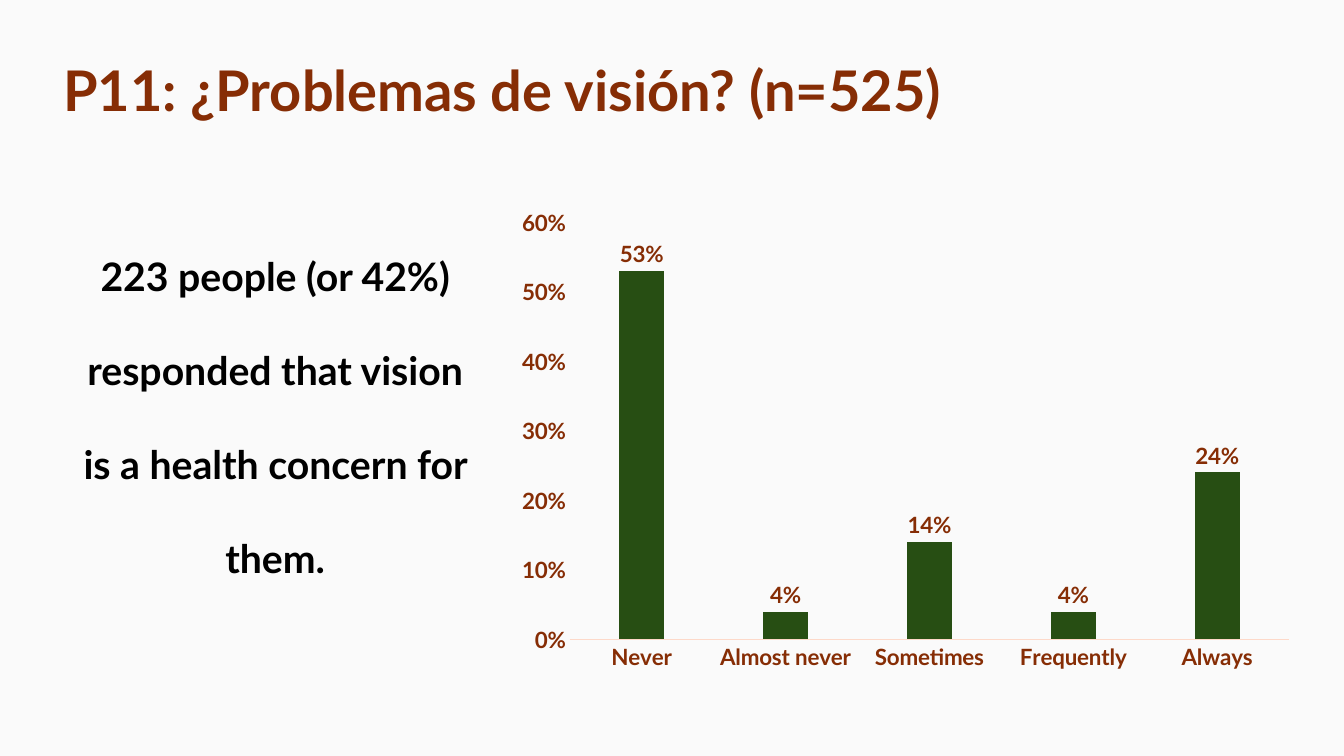
import pptx
import pptx.chart.data
import pptx.dml.color
import pptx.enum.chart
import pptx.enum.text
import pptx.util

RUST = pptx.dml.color.RGBColor(0x86, 0x2D, 0x05)
GREEN = pptx.dml.color.RGBColor(0x27, 0x4E, 0x13)
PEACH = pptx.dml.color.RGBColor(0xFD, 0xD9, 0xC9)
BLACK = pptx.dml.color.RGBColor(0, 0, 0)
PAPER = pptx.dml.color.RGBColor(0xFA, 0xFA, 0xFA)
FONT = "Lato"
EMU_PER_PX = 9525  # 96 px to the inch

ANSWERS = {
    "Never": 0.53,
    "Almost never": 0.04,
    "Sometimes": 0.14,
    "Frequently": 0.04,
    "Always": 0.24,
}


def px(length):
    return pptx.util.Emu(length * EMU_PER_PX)


def set_font(font, size, color):
    font.name = FONT
    font.size = pptx.util.Pt(size)
    font.bold = True
    font.color.rgb = color


def add_text(slide, box, text, *, size, color, align, anchor, spacing, side_inset):
    frame = slide.shapes.add_textbox(*map(px, box)).text_frame
    frame.word_wrap = True
    frame.vertical_anchor = anchor
    frame.margin_left = frame.margin_right = px(side_inset)
    frame.margin_top = frame.margin_bottom = px(5)
    paragraph = frame.paragraphs[0]
    paragraph.alignment = align
    paragraph.line_spacing = spacing
    run = paragraph.add_run()
    run.text = text
    set_font(run.font, size, color)


def add_question(slide, box):
    add_text(slide, box, "P11: ¿Problemas de visión? (n=525)",
             size=40, color=RUST, align=pptx.enum.text.PP_ALIGN.LEFT,
             anchor=pptx.enum.text.MSO_ANCHOR.BOTTOM, spacing=0.9, side_inset=0)


def add_finding(slide, box):
    add_text(slide, box,
             "223 people (or 42%) responded that vision is a health concern for them.",
             size=28, color=BLACK, align=pptx.enum.text.PP_ALIGN.CENTER,
             anchor=pptx.enum.text.MSO_ANCHOR.TOP, spacing=2.0, side_inset=10)


def add_answer_chart(slide, box):
    data = pptx.chart.data.CategoryChartData(number_format="0%")
    data.categories = list(ANSWERS)
    data.add_series("Series 1", list(ANSWERS.values()))
    chart = slide.shapes.add_chart(
        pptx.enum.chart.XL_CHART_TYPE.COLUMN_CLUSTERED, *map(px, box), data).chart
    chart.has_legend = False
    chart.has_title = False
    set_font(chart.font, 16, RUST)

    # Axes
    for axis in (chart.category_axis, chart.value_axis):
        axis.major_tick_mark = pptx.enum.chart.XL_TICK_MARK.NONE
        axis.minor_tick_mark = pptx.enum.chart.XL_TICK_MARK.NONE
        axis.has_major_gridlines = False
        set_font(axis.tick_labels.font, 16, RUST)
    baseline = chart.category_axis.format.line
    baseline.color.rgb = PEACH
    baseline.width = pptx.util.Pt(0.75)
    share_axis = chart.value_axis
    share_axis.format.line.fill.background()
    share_axis.minimum_scale = 0
    share_axis.maximum_scale = 0.6
    share_axis.major_unit = 0.1
    share_axis.tick_labels.number_format = "0%"
    share_axis.tick_labels.number_format_is_linked = False

    # Columns and their labels
    columns = chart.plots[0]
    columns.vary_by_categories = False
    columns.gap_width = 219
    columns.overlap = -27
    answers = columns.series[0]
    answers.format.fill.solid()
    answers.format.fill.fore_color.rgb = GREEN
    shares = answers.data_labels
    shares.show_value = True
    shares.position = pptx.enum.chart.XL_LABEL_POSITION.OUTSIDE_END
    shares.number_format = "0%"
    shares.number_format_is_linked = False
    set_font(shares.font, 16, RUST)


def add_survey_slide(deck):
    slide = deck.slides.add_slide(deck.slide_layouts[6])
    slide.background.fill.solid()
    slide.background.fill.fore_color.rgb = PAPER
    add_question(slide, (60, 54, 1150, 69))
    add_finding(slide, (60, 190, 404, 430))
    add_answer_chart(slide, (482, 190, 761, 457))


def main():
    deck = pptx.Presentation()
    deck.slide_width, deck.slide_height = px(1280), px(720)
    add_survey_slide(deck)
    deck.save("out.pptx")


if __name__ == "__main__":
    main()
